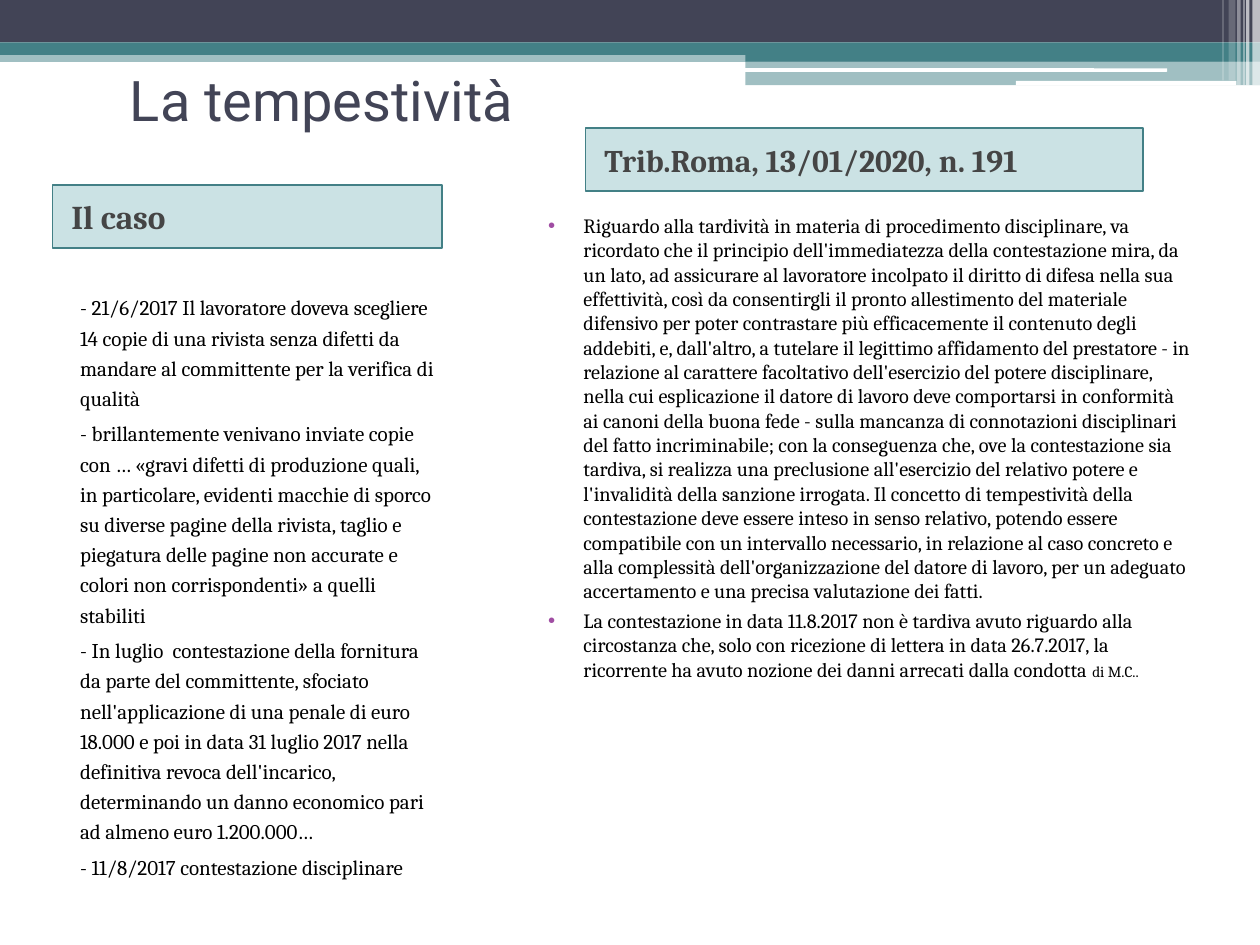
from lxml.etree import SubElement
from pptx import Presentation
from pptx.dml.color import RGBColor
from pptx.enum.shapes import MSO_SHAPE as Shape
from pptx.enum.text import MSO_ANCHOR as Anchor, MSO_AUTO_SIZE as AutoSize, PP_ALIGN as Align
from pptx.oxml.ns import qn
from pptx.util import Pt

NAVY = RGBColor(0x42, 0x44, 0x56)
TEAL = RGBColor(0x43, 0x80, 0x86)
HEADING_FILL = RGBColor(0x32, 0x8E, 0x97)
HEADING_TEXT = RGBColor(0x45, 0x45, 0x45)
PURPLE = RGBColor(0xA0, 0x4D, 0xA3)
WHITE = RGBColor(0xFF, 0xFF, 0xFF)
BLACK = RGBColor(0, 0, 0)

# left, top, width, height, colour, opacity in percent
BANDS = [
    (0, 28.8, 720, 6.6, TEAL, 50),
    (0, 0, 720, 24.2, NAVY, 100),
    (0, 24.2, 720, 7.2, TEAL, 100),
    (426, 28, 294, 7.2, TEAL, 100),
    (426, 35.2, 294, 13.4, TEAL, 50),
]
HIGHLIGHTS = [(425.5, 39, 241.5, 2), (580.5, 46.2, 126, 2.6)]
# left, width, height, opacity in percent
STRIPES = [
    (715.7, 4.3, 48.8, 65),
    (712, 2, 48.8, 65),
    (710.5, 0.7, 48.8, 60),
    (707, 2, 48.8, 40),
    (702, 4, 46, 20),
    (698.5, 0.7, 46, 30),
]

CASE_FACTS = [
    "- 21/6/2017 Il lavoratore doveva scegliere 14 copie di una rivista senza difetti da "
    "mandare al committente per la verifica di qualità",
    "- brillantemente venivano inviate copie con … «gravi difetti di produzione quali, in "
    "particolare, evidenti macchie di sporco su diverse pagine della rivista, taglio e "
    "piegatura delle pagine non accurate e colori non corrispondenti» a quelli stabiliti",
    "- In luglio  contestazione della fornitura da parte del committente, sfociato "
    "nell'applicazione di una penale di euro 18.000 e poi in data 31 luglio 2017 nella "
    "definitiva revoca dell'incarico, determinando un danno economico pari ad almeno euro "
    "1.200.000…",
    "- 11/8/2017 contestazione disciplinare",
]
PRINCIPLE = [
    "Riguardo alla tardività in materia di procedimento disciplinare, va ricordato che il "
    "principio dell'immediatezza della contestazione mira, da un lato, ad assicurare al "
    "lavoratore incolpato il diritto di difesa nella sua effettività, così da consentirgli il "
    "pronto allestimento del materiale difensivo per poter contrastare più efficacemente il "
    "contenuto degli addebiti, e, dall'altro, a tutelare il legittimo affidamento del "
    "prestatore",
    "- in relazione al carattere facoltativo dell'esercizio del potere disciplinare, nella cui "
    "esplicazione il datore di lavoro deve comportarsi in conformità ai canoni della buona "
    "fede - sulla mancanza di connotazioni disciplinari del fatto incriminabile; con la "
    "conseguenza che, ove la contestazione sia tardiva, si realizza una preclusione "
    "all'esercizio del relativo potere e l'invalidità della sanzione irrogata.",
    "Il concetto di tempestività della contestazione deve essere inteso in senso relativo, "
    "potendo essere compatibile con un intervallo necessario, in relazione al caso concreto e "
    "alla complessità dell'organizzazione del datore di lavoro, per un adeguato accertamento e "
    "una precisa valutazione dei fatti.",
]
OUTCOME = (
    "La contestazione in data 11.8.2017 non è tardiva avuto riguardo alla circostanza che, "
    "solo con ricezione di lettera in data 26.7.2017, la ricorrente ha avuto nozione dei danni "
    "arrecati dalla condotta "
)
OUTCOME_ENDING = "di M.C.."


def set_fill(shape, colour, opacity=100):
    shape.fill.solid()
    shape.fill.fore_color.rgb = colour
    if opacity < 100:
        colour_element = shape.fill._xPr.find(qn("a:solidFill"))[0]
        SubElement(colour_element, qn("a:alpha"), val=str(opacity * 1000))


def add_block(slide, left, top, width, height, colour, opacity=100, kind=Shape.RECTANGLE):
    shape = slide.shapes.add_shape(kind, Pt(left), Pt(top), Pt(width), Pt(height))
    shape.shadow.inherit = False
    shape.line.fill.background()
    set_fill(shape, colour, opacity)


def place(shape, left, top, width, height):
    shape.left, shape.top, shape.width, shape.height = map(Pt, (left, top, width, height))


def add_run(paragraph, text, font, size, colour, bold=False):
    run = paragraph.add_run()
    run.text = text
    run.font.name, run.font.size, run.font.bold = font, Pt(size), bold
    run.font.color.rgb = colour


def set_bullet(paragraph, margin, indent, bullet_colour):
    """Set the indents, and a dot of the given colour, or no bullet when it is None."""
    properties = paragraph._p.get_or_add_pPr()
    properties.set("marL", str(Pt(margin)))
    properties.set("indent", str(Pt(indent)))
    if bullet_colour is None:
        SubElement(properties, qn("a:buNone"))
    else:
        colour_element = SubElement(properties, qn("a:buClr"))
        SubElement(colour_element, qn("a:srgbClr"), val=str(bullet_colour))
        SubElement(properties, qn("a:buChar"), char="•")


def write_text(shape, texts, *, size, font="Cambria", colour=BLACK, bold=False,
               anchor=Anchor.TOP, margin=0, indent=0, bullet_colour=None,
               line_spacing=1.0, space_before=3):
    frame = shape.text_frame
    frame.word_wrap = True
    frame.auto_size = AutoSize.NONE
    frame.vertical_anchor = anchor
    for index, text in enumerate(texts):
        paragraph = frame.add_paragraph() if index else frame.paragraphs[0]
        paragraph.alignment = Align.LEFT
        paragraph.line_spacing = line_spacing
        paragraph.space_before = Pt(space_before)
        set_bullet(paragraph, margin, indent, bullet_colour)
        add_run(paragraph, text, font, size, colour, bold)
    return frame


def add_decoration(slide):
    for band in BANDS:
        add_block(slide, *band)
    for highlight in HIGHLIGHTS:
        add_block(slide, *highlight, WHITE, kind=Shape.ROUNDED_RECTANGLE)
    for left, width, height, opacity in STRIPES:
        add_block(slide, left, 0, width, height, WHITE, opacity)


def format_heading(shape, text, size):
    set_fill(shape, HEADING_FILL, 25)
    shape.line.color.rgb = TEAL
    shape.line.width = Pt(1)
    write_text(shape, [text], size=size, colour=HEADING_TEXT, bold=True,
               anchor=Anchor.MIDDLE, margin=3.6)


def main():
    presentation = Presentation()
    presentation.slide_width, presentation.slide_height = Pt(720), Pt(540)
    slide = presentation.slides.add_slide(presentation.slide_layouts.get_by_name("Comparison"))
    title, case_heading, case_body, ruling_heading, ruling_body = slide.placeholders
    add_decoration(slide)
    for placeholder in (title, case_heading, ruling_heading, case_body, ruling_body):
        slide.shapes._spTree.append(placeholder._element)  # in front of the decoration

    place(title, 67, 43.2, 245, 26.6)
    write_text(title, ["La tempestività"], size=32, font="Roboto", colour=NAVY,
               anchor=Anchor.MIDDLE, space_before=0)

    place(case_heading, 30, 105.8, 222.5, 36)
    format_heading(case_heading, "Il caso", 19)
    place(ruling_heading, 334.6, 73.2, 318.4, 36)
    format_heading(ruling_heading, "Trib.Roma, 13/01/2020, n. 191", 18)

    place(case_body, 30, 162, 228, 357)
    write_text(case_body, CASE_FACTS, size=12, margin=8.6, line_spacing=1.2)

    place(ruling_body, 297.4, 105.8, 392.4, 391)
    frame = write_text(ruling_body, [" ".join(PRINCIPLE), OUTCOME], size=11.6, margin=28.8,
                       indent=-20.2, bullet_colour=PURPLE)
    frame.margin_top = Pt(16)
    add_run(frame.paragraphs[-1], OUTCOME_ENDING, "Cambria", 8.8, BLACK)

    presentation.save("out.pptx")


if __name__ == "__main__":
    main()
